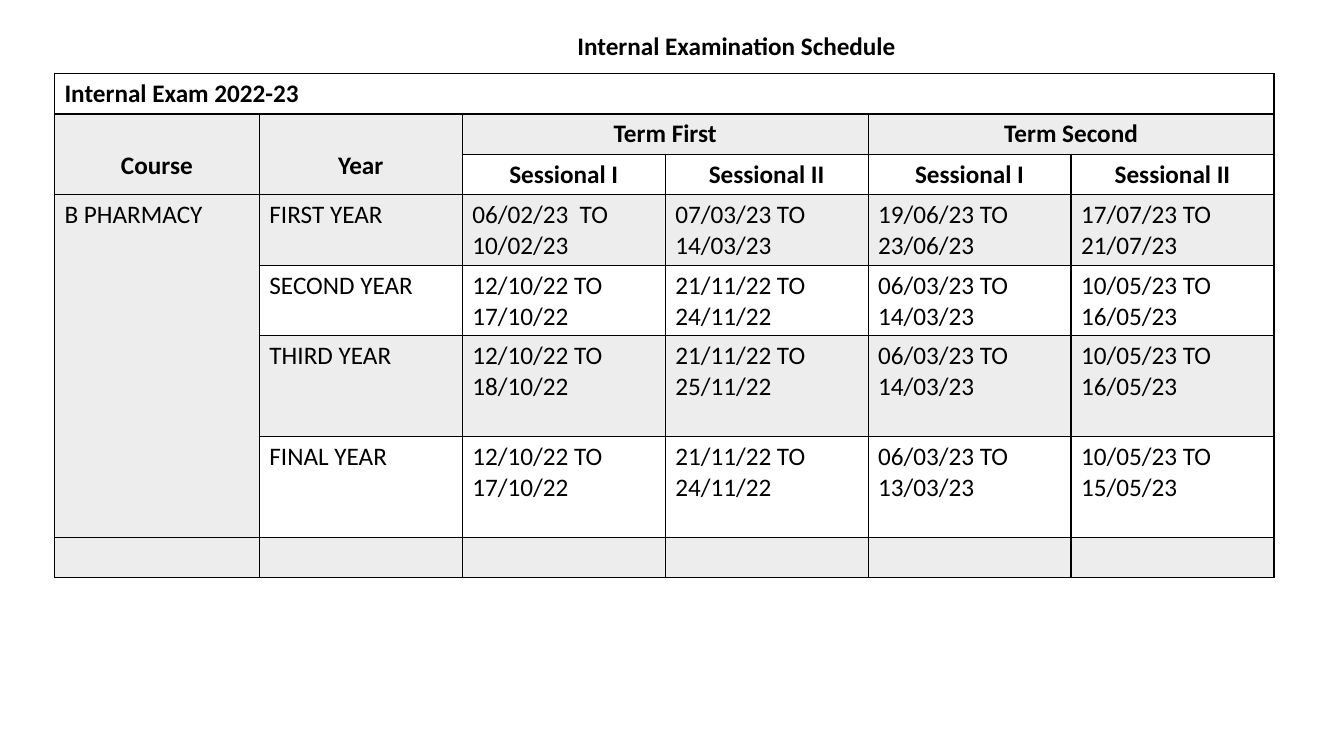
from lxml.etree import SubElement
from pptx import Presentation
from pptx.dml.color import RGBColor
from pptx.enum.text import MSO_AUTO_SIZE as AutoSize, PP_ALIGN as Align
from pptx.oxml.ns import qn
from pptx.util import Inches, Pt

WIDTH, HEIGHT = 13.33, 7.5
COLUMNS, ROWS = 100, 75
BLACK, GREY = "000000", "A5A5A5"


def color(code):
    return RGBColor.from_string(code)


class Sheet:
    """Holds the text style and the current slide, measured in grid columns and rows."""

    def __init__(self, page, font="Calibri", size=18):
        self.page = page
        self.style = {"name": font, "size": Pt(size)}

    def across(self, columns):
        return Inches(columns * WIDTH / COLUMNS)

    def down(self, rows):
        return Inches(rows * HEIGHT / ROWS)

    def area(self, left, top, width, height):
        return self.across(left), self.down(top), self.across(width), self.down(height)

    def label(self, frame, text, align=Align.LEFT, bold=False):
        para = frame.paragraphs[0]
        para.alignment = align
        span = para.add_run()
        span.text = text
        for key, value in {**self.style, "bold": bold}.items():
            setattr(span.font, key, value)
        span.font.color.rgb = color(BLACK)

    def title(self, text, *area):
        frame = self.page.shapes.add_textbox(*self.area(*area)).text_frame
        frame.word_wrap = True
        frame.auto_size = AutoSize.SHAPE_TO_FIT_TEXT
        self.label(frame, text, Align.CENTER, True)

    def table(self, left, top, widths, heights):
        area = self.area(left, top, sum(widths), sum(heights))
        table = self.page.shapes.add_table(len(heights), len(widths), *area).table
        table.first_row = table.horz_banding = False
        for column, width in zip(table.columns, widths):
            column.width = self.across(width)
        for row, height in zip(table.rows, heights):
            row.height = self.down(height)
        return table

    def border(self, cell, points=1):
        properties = cell._tc.get_or_add_tcPr()
        for side in ("lnL", "lnR", "lnT", "lnB"):
            line = SubElement(properties, qn(f"a:{side}"), w=str(Pt(points)))
            fill = SubElement(line, qn("a:solidFill"))
            SubElement(fill, qn("a:srgbClr"), val=BLACK)

    def shade(self, cell, shaded, opacity=20):
        if not shaded:
            cell.fill.background()
            return
        cell.fill.solid()
        cell.fill.fore_color.rgb = color(GREY)
        tone = cell._tc.tcPr.find(f"{qn('a:solidFill')}/{qn('a:srgbClr')}")
        SubElement(tone, qn("a:alpha"), val=str(opacity * 1000))


# Schedule content
SESSIONS = ["Sessional I", "Sessional II"]
SCHEDULE = [
    ["Internal Exam 2022-23"],
    ["Course", "Year", "Term First", "", "Term Second", ""],
    ["", "", *SESSIONS, *SESSIONS],
    ["B PHARMACY", "FIRST YEAR", "06/02/23  TO 10/02/23", "07/03/23 TO 14/03/23",
     "19/06/23 TO 23/06/23", "17/07/23 TO 21/07/23"],
    ["", "SECOND YEAR", "12/10/22 TO 17/10/22", "21/11/22 TO 24/11/22",
     "06/03/23 TO 14/03/23", "10/05/23 TO 16/05/23"],
    ["", "THIRD YEAR", "12/10/22 TO 18/10/22", "21/11/22 TO 25/11/22",
     "06/03/23 TO 14/03/23", "10/05/23 TO 16/05/23"],
    ["", "FINAL YEAR", "12/10/22 TO 17/10/22", "21/11/22 TO 24/11/22",
     "06/03/23 TO 13/03/23", "10/05/23 TO 15/05/23"],
    [],
]
# First and last cell of each merged block, as (row, column)
MERGES = [((0, 0), (0, 5)), ((1, 0), (2, 0)), ((1, 1), (2, 1)),
          ((1, 2), (1, 3)), ((1, 4), (1, 5)), ((3, 0), (6, 0))]
HEADER_ROWS = (1, 2)


def main():
    deck = Presentation()
    deck.slide_width, deck.slide_height = Inches(WIDTH), Inches(HEIGHT)
    sheet = Sheet(deck.slides.add_slide(deck.slide_layouts[6]))

    # Heading
    sheet.title("Internal Examination Schedule", 26.4, 2.5, 56.8, 4)

    # Table frame: every second row is shaded
    table = sheet.table(4.05, 7.3, [15.25] + [15.1] * 5, [4, 4, 4, 7, 7, 10, 10, 4])
    for row in range(len(table.rows)):
        for column in range(len(table.columns)):
            cell = table.cell(row, column)
            sheet.border(cell)
            sheet.shade(cell, row % 2 == 1)
    for first, last in MERGES:
        table.cell(*first).merge(table.cell(*last))

    # Table text
    for row, texts in enumerate(SCHEDULE):
        align = Align.CENTER if row in HEADER_ROWS else Align.LEFT
        for column, text in enumerate(texts):
            if text:
                sheet.label(table.cell(row, column).text_frame, text, align, row < 3)

    # Course and Year sit one text line lower
    for column in (0, 1):
        table.cell(1, column).margin_top = Inches(0.36)

    deck.save("out.pptx")


if __name__ == "__main__":
    main()
